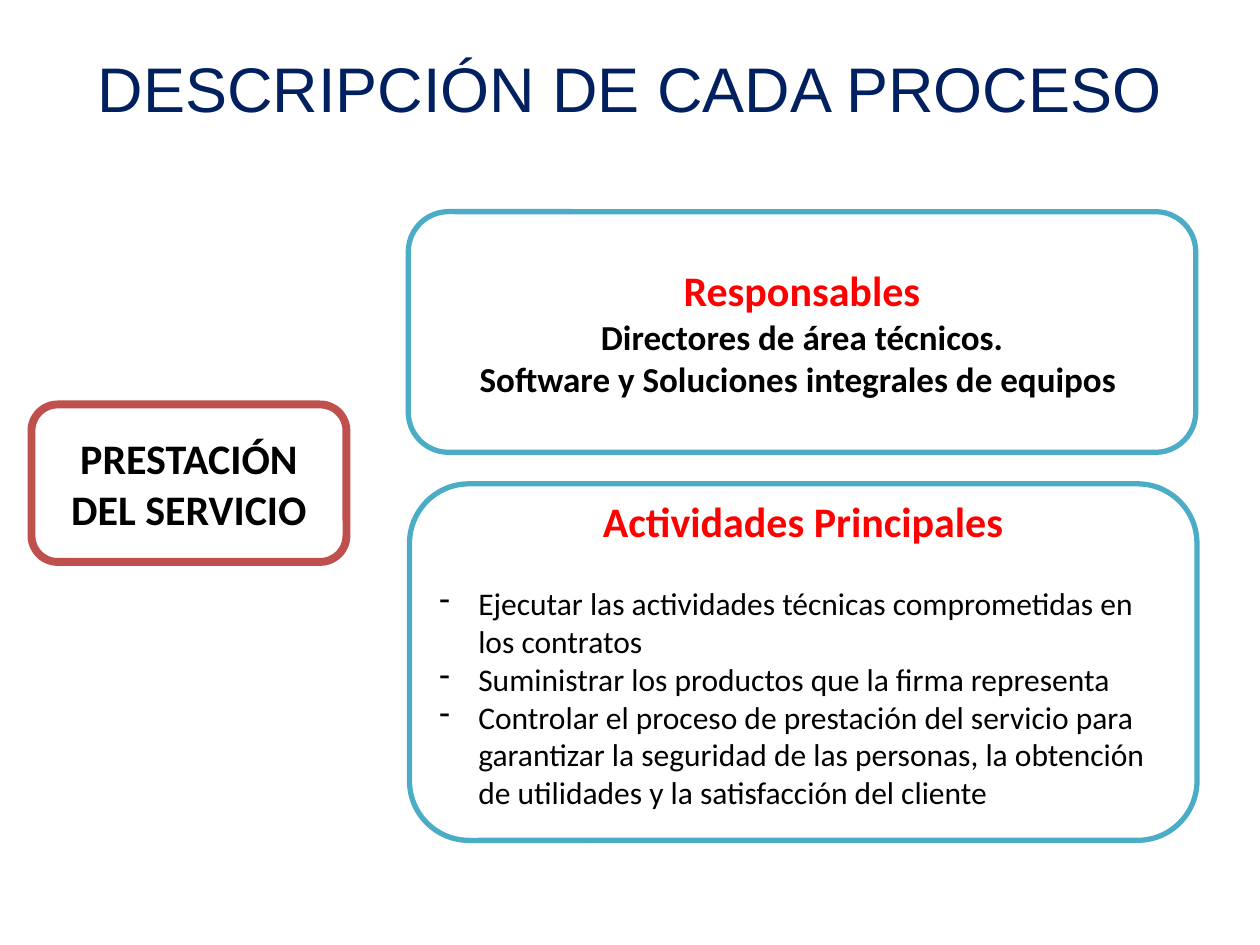
from dataclasses import dataclass

from lxml import etree
from pptx import Presentation
from pptx import util as u
from pptx.dml.color import RGBColor
from pptx.enum import shapes, text
from pptx.oxml.ns import qn


@dataclass(frozen=True)
class Theme:
    navy: str = "002060"
    red: str = "FF0000"
    black: str = "000000"
    white: str = "FFFFFF"
    process_line: str = "C0504D"
    detail_line: str = "4BACC6"
    title_font: str = "Arial"
    body_font: str = "Calibri"
    title_size: int = 36
    heading_size: int = 24
    detail_size: int = 20
    list_size: int = 18


THEME = Theme()


def color(value):
    return RGBColor.from_string(value)


def add_bullet(paragraph, indent):
    """Give the paragraph a black dash with a hanging indent."""
    properties = paragraph._p.get_or_add_pPr()
    properties.set("marL", str(indent))
    properties.set("indent", str(-indent))
    bullet_color = etree.SubElement(properties, qn("a:buClr"))
    etree.SubElement(bullet_color, qn("a:srgbClr"), val=THEME.black)
    etree.SubElement(properties, qn("a:buChar"), char="-")


def add_text(frame, content, size, font=THEME.body_font, ink=THEME.black, bold=False,
             align=text.PP_ALIGN.CENTER, bullet=False, space_before=0):
    """Write a paragraph, using the frame's first one while it is empty."""
    first = frame.paragraphs[0]
    paragraph = frame.add_paragraph() if first.runs else first
    paragraph.alignment = align
    paragraph.space_before = u.Pt(space_before)
    if bullet:
        add_bullet(paragraph, u.Inches(0.31))
    paragraph.add_run().text = content
    paragraph.font.size = u.Pt(size)
    for run in paragraph.runs:
        run.font.name = font
        run.font.size = u.Pt(size)
        run.font.bold = bold
        run.font.color.rgb = color(ink)


def prepare_frame(shape):
    frame = shape.text_frame
    frame.word_wrap = True
    frame.vertical_anchor = text.MSO_ANCHOR.MIDDLE
    return frame


def add_rounded_box(slide, box, line, line_width):
    shape = slide.shapes.add_shape(
        shapes.MSO_SHAPE.ROUNDED_RECTANGLE, *map(u.Inches, box))
    shape.shadow.inherit = False
    shape.fill.solid()
    shape.fill.fore_color.rgb = color(THEME.white)
    shape.line.color.rgb = color(line)
    shape.line.width = u.Pt(line_width)
    return prepare_frame(shape)


def add_title(slide, box, title):
    frame = prepare_frame(slide.shapes.add_textbox(*map(u.Inches, box)))
    add_text(frame, title, THEME.title_size, font=THEME.title_font, ink=THEME.navy)


def add_process(slide, box, name):
    frame = add_rounded_box(slide, box, THEME.process_line, 4.5)
    add_text(frame, name, THEME.heading_size, bold=True)


def add_detail_box(slide, box, heading):
    frame = add_rounded_box(slide, box, THEME.detail_line, 3)
    add_text(frame, heading, THEME.heading_size, ink=THEME.red, bold=True)
    return frame


def add_owners(slide, box, heading, owners):
    frame = add_detail_box(slide, box, heading)
    for owner in owners:
        add_text(frame, owner, THEME.detail_size, bold=True)


def add_activities(slide, box, heading, activities):
    frame = add_detail_box(slide, box, heading)
    frame.margin_bottom = u.Inches(0.19)
    for index, activity in enumerate(activities):
        add_text(frame, activity, THEME.list_size, align=text.PP_ALIGN.LEFT,
                 bullet=True, space_before=0 if index else 22)


def main():
    presentation = Presentation()
    presentation.slide_width = u.Inches(10)
    presentation.slide_height = u.Inches(7.5)
    slide = presentation.slides.add_slide(presentation.slide_layouts[6])

    add_title(slide, (0.5, 0.3, 9, 0.78), "DESCRIPCIÓN DE CADA PROCESO")
    add_process(slide, (0.25, 3.21, 2.5, 1.25), "PRESTACIÓN DEL SERVICIO")
    add_owners(slide, (3.24, 1.68, 6.25, 1.91), "Responsables", [
        "Directores de área técnicos.",
        "Software y Soluciones integrales de equipos ",
    ])
    add_activities(slide, (3.25, 3.84, 6.25, 2.83), "Actividades Principales", [
        "Ejecutar las actividades técnicas comprometidas en los contratos",
        "Suministrar los productos que la firma representa",
        "Controlar el proceso de prestación del servicio para garantizar la "
        "seguridad de las personas, la obtención de utilidades y la "
        "satisfacción del cliente",
    ])
    presentation.save("out.pptx")


if __name__ == "__main__":
    main()
